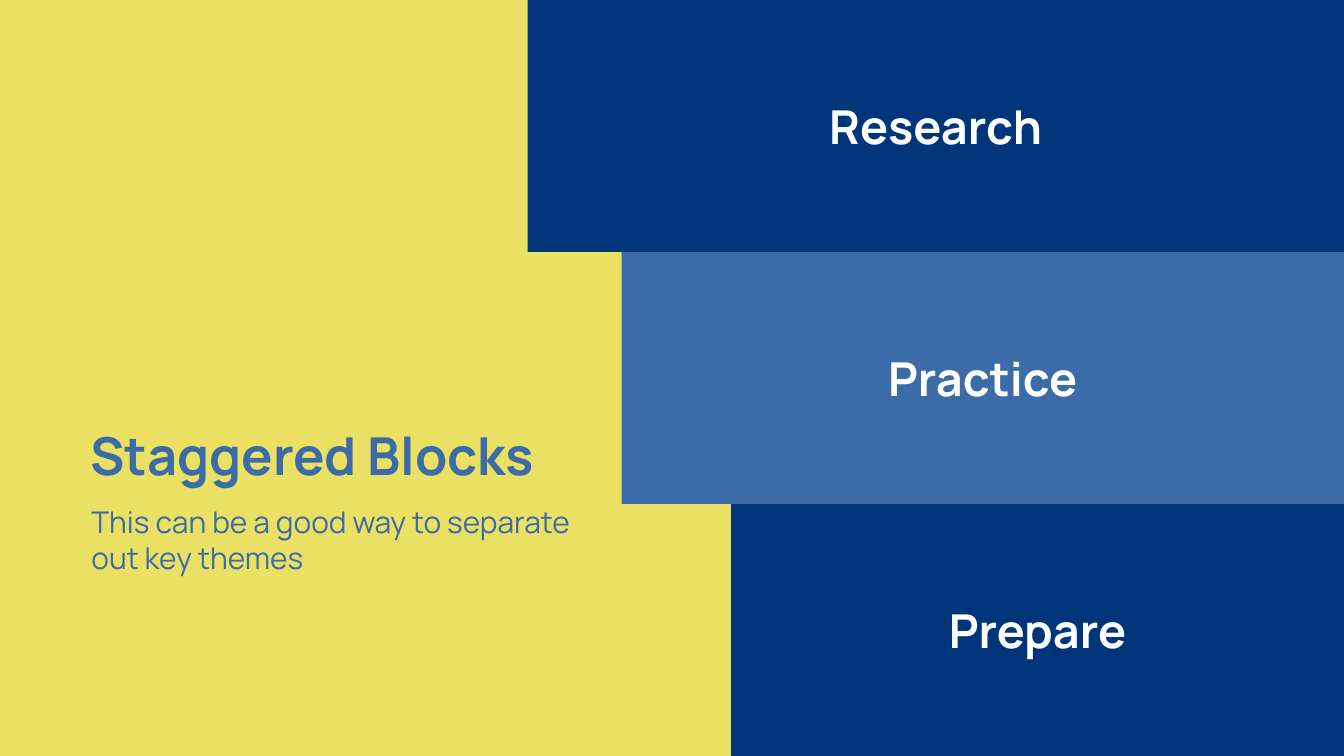
from pptx import Presentation
from pptx.dml.color import RGBColor
from pptx.enum.shapes import MSO_SHAPE
from pptx.enum.text import MSO_AUTO_SIZE, PP_ALIGN
from pptx.util import Inches, Pt

COLORS = {"yellow": "EAE164", "navy": "00357A", "blue": "3C6CA8", "white": "FFFFFF"}
FONT = "Manrope"
COLUMNS, ROWS = 20, 3
LABEL_WIDTH = 6.53


class StaggeredSlide:
    """Places elements on a grid of 20 columns and 3 rows."""

    def __init__(self, deck):
        self.column = deck.slide_width / COLUMNS
        self.row = deck.slide_height / ROWS
        self.page = deck.slides.add_slide(deck.slide_layouts[6])
        self.paint(self.page.background.fill, "yellow")

    def paint(self, fill, color):
        fill.solid()
        fill.fore_color.rgb = RGBColor.from_string(COLORS[color])

    def place(self, left, top, width, height):
        return (round(left * self.column), round(top * self.row),
                round(width * self.column), round(height * self.row))

    def block(self, left, top, color):
        """A band one row high that runs to the right edge."""
        box = self.page.shapes.add_shape(
            MSO_SHAPE.RECTANGLE, *self.place(left, top, COLUMNS - left, 1))
        box.shadow.inherit = False
        self.paint(box.fill, color)
        box.line.fill.background()

    def text(self, words, left, top, width, height, size, color,
             bold=False, align=PP_ALIGN.LEFT, spacing=None):
        box = self.page.shapes.add_textbox(*self.place(left, top, width, height))
        frame = box.text_frame
        frame.word_wrap = True
        frame.auto_size = MSO_AUTO_SIZE.SHAPE_TO_FIT_TEXT
        frame.margin_left = frame.margin_right = 0
        frame.margin_top = frame.margin_bottom = 0
        para = frame.paragraphs[0]
        para.text = words
        para.alignment = align
        if spacing:
            para.line_spacing = Pt(spacing)
        para.font.name = FONT
        para.font.size = Pt(size)
        para.font.bold = bold
        para.font.color.rgb = RGBColor.from_string(COLORS[color])


def main():
    deck = Presentation()
    deck.slide_width, deck.slide_height = Inches(20), Inches(11.25)
    slide = StaggeredSlide(deck)

    # Staggered blocks, each with a centred label
    themes = [("Research", 7.85, "navy"), ("Practice", 9.25, "blue"),
              ("Prepare", 10.88, "navy")]
    for row, (theme, left, color) in enumerate(themes):
        slide.block(left, row, color)
        label_left = (left + COLUMNS - LABEL_WIDTH) / 2
        slide.text(theme, label_left, row + 0.35, LABEL_WIDTH, 0.26, 50, "white",
                   bold=True, align=PP_ALIGN.CENTER, spacing=70)

    # Heading and explanation
    slide.text("Staggered Blocks", 1.34, 1.68, 7.5, 0.25, 56, "blue",
               bold=True, spacing=67.2)
    slide.text("This can be a good way to separate out key themes",
               1.36, 2, 7.22, 0.29, 32, "blue")

    deck.save("out.pptx")


if __name__ == "__main__":
    main()
